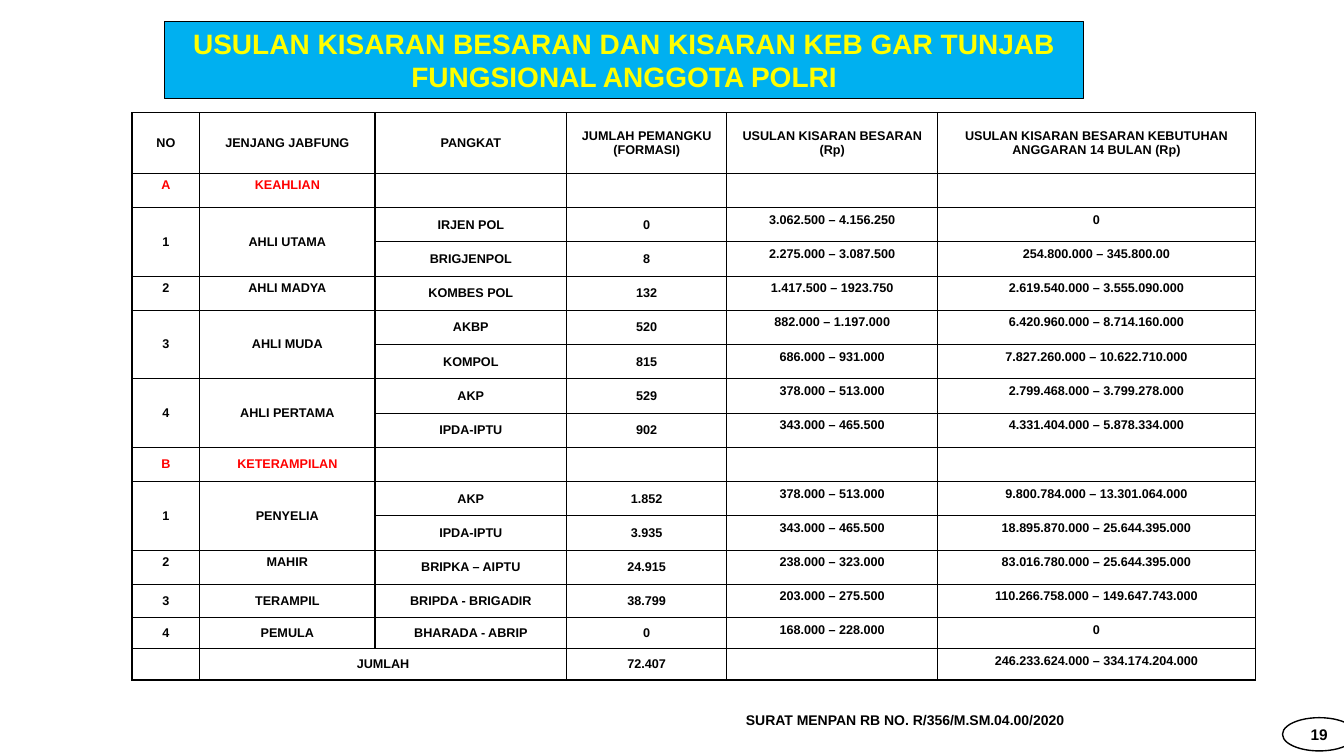
from lxml import etree
from pptx import Presentation
from pptx.dml.color import RGBColor
from pptx.enum.shapes import MSO_SHAPE
from pptx.enum.text import MSO_ANCHOR, PP_ALIGN
from pptx.oxml.ns import qn
from pptx.util import Inches, Pt

RECTANGLE, OVAL = MSO_SHAPE.RECTANGLE, MSO_SHAPE.OVAL
TOP, MIDDLE = MSO_ANCHOR.TOP, MSO_ANCHOR.MIDDLE
CENTER, JUSTIFY = PP_ALIGN.CENTER, PP_ALIGN.JUSTIFY
GRID_COLUMNS, GRID_ROWS, GRID_STEP = 133.3, 75, 0.1

HEADERS = [
    "NO", "JENJANG JABFUNG", "PANGKAT", "JUMLAH PEMANGKU (FORMASI)",
    "USULAN KISARAN BESARAN (Rp)",
    "USULAN KISARAN BESARAN KEBUTUHAN ANGGARAN 14 BULAN (Rp)",
]
POSITIONS = [
    ["A", "KEAHLIAN", "", "", "", ""],
    ["1", "AHLI UTAMA", "IRJEN POL", "0", "3.062.500 – 4.156.250", "0"],
    ["", "", "BRIGJENPOL", "8", "2.275.000 – 3.087.500", "254.800.000 – 345.800.00"],
    ["2", "AHLI MADYA", "KOMBES POL", "132", "1.417.500 – 1923.750", "2.619.540.000 – 3.555.090.000"],
    ["3", "AHLI MUDA", "AKBP", "520", "882.000 – 1.197.000", "6.420.960.000 – 8.714.160.000"],
    ["", "", "KOMPOL", "815", "686.000 – 931.000", "7.827.260.000 – 10.622.710.000"],
    ["4", "AHLI PERTAMA", "AKP", "529", "378.000 – 513.000", "2.799.468.000 – 3.799.278.000"],
    ["", "", "IPDA-IPTU", "902", "343.000 – 465.500", "4.331.404.000 – 5.878.334.000"],
    ["B", "KETERAMPILAN", "", "", "", ""],
    ["1", "PENYELIA", "AKP", "1.852", "378.000 – 513.000", "9.800.784.000 – 13.301.064.000"],
    ["", "", "IPDA-IPTU", "3.935", "343.000 – 465.500", "18.895.870.000 – 25.644.395.000"],
    ["2", "MAHIR", "BRIPKA – AIPTU", "24.915", "238.000 – 323.000", "83.016.780.000 – 25.644.395.000"],
    ["3", "TERAMPIL", "BRIPDA - BRIGADIR", "38.799", "203.000 – 275.500", "110.266.758.000 – 149.647.743.000"],
    ["4", "PEMULA", "BHARADA - ABRIP", "0", "168.000 – 228.000", "0"],
]
TOTAL = ["", "JUMLAH", "", "72.407", "", "246.233.624.000 – 334.174.204.000"]
COLUMN_WIDTHS = [6.7, 17.4, 19, 15.9, 20.9, 31.5]
ROW_HEIGHTS = [6] + [3.4] * 12 + [3.3, 3.1, 3.1]
TOP_LABELS = {"KEAHLIAN", "AHLI MADYA", "MAHIR"}
SECTIONS = {"A", "B"}


def color(value):
    return RGBColor.from_string(value)


def grid(*steps):
    return [Inches(step * GRID_STEP) for step in steps]


def add_solid(parent, value):
    fill = etree.SubElement(parent, qn("a:solidFill"))
    etree.SubElement(fill, qn("a:srgbClr"), val=value)


class Sheet:
    font, ink, paper = "Arial", "000000", "FFFFFF"

    def __init__(self, deck):
        self.slide = deck.slides.add_slide(deck.slide_layouts[6])

    def label(self, frame, text, size, ink=None, align=CENTER):
        frame.text = text
        paragraph = frame.paragraphs[0]
        paragraph.alignment = align
        for run in paragraph.runs:
            run.font.name, run.font.size, run.font.bold = self.font, Pt(size), True
            run.font.color.rgb = color(ink or self.ink)
        if not text:
            etree.SubElement(paragraph._p, qn("a:endParaRPr"), sz=str(size * 100))
        return paragraph

    def shape(self, kind, place, text, size, fill, line, ink=None, anchor=MIDDLE):
        shape = self.slide.shapes.add_shape(kind, *grid(*place))
        shape.shadow.inherit = False
        shape.fill.solid()
        shape.fill.fore_color.rgb = color(fill)
        shape.line.color.rgb = color(self.ink)
        shape.line.width = Pt(line)
        shape.text_frame.word_wrap = True
        shape.text_frame.vertical_anchor = anchor
        return self.label(shape.text_frame, text, size, ink)

    def shade_text(self, paragraph, ink):
        for run in paragraph.runs:
            properties = run._r.get_or_add_rPr()
            outline = etree.Element(qn("a:ln"), w=str(Pt(0.75)))
            add_solid(outline, ink)
            properties.insert(0, outline)
            effects = etree.Element(qn("a:effectLst"))
            shadow = etree.SubElement(
                effects, qn("a:outerShdw"),
                blurRad=str(Pt(3)), dist=str(Pt(3)), dir="2700000", algn="tl")
            etree.SubElement(shadow, qn("a:srgbClr"), val=self.ink)
            properties.insert(2, effects)

    def note(self, place, text, size):
        box = self.slide.shapes.add_textbox(*grid(*place))
        box.text_frame.word_wrap = True
        self.label(box.text_frame, text, size, align=JUSTIFY)

    def cell(self, cell, text, size, ink, anchor):
        cell.vertical_anchor = anchor
        cell.margin_left = cell.margin_right = Inches(0.13)
        cell.margin_top = cell.margin_bottom = Inches(0.05)
        self.label(cell.text_frame, text, size, ink)
        properties = cell._tc.get_or_add_tcPr()
        for side in ("L", "R", "T", "B"):
            border = etree.SubElement(properties, qn(f"a:ln{side}"), w=str(Pt(1)))
            add_solid(border, self.ink)
        cell.fill.solid()
        cell.fill.fore_color.rgb = color(self.paper)

    def table(self, left, top, rows, size):
        frame = self.slide.shapes.add_table(
            len(rows), len(COLUMN_WIDTHS),
            *grid(left, top, sum(COLUMN_WIDTHS), sum(ROW_HEIGHTS)))
        table = frame.table
        table.first_row = table.horz_banding = False
        for column, width in zip(table.columns, grid(*COLUMN_WIDTHS)):
            column.width = width
        for row, height in zip(table.rows, grid(*ROW_HEIGHTS)):
            row.height = height
        for r, values in enumerate(rows):
            ink = "FF0000" if values[0] in SECTIONS else self.ink
            for c, text in enumerate(values):
                high = r > 0 and (c > 3 or c < 2 and values[1] in TOP_LABELS)
                self.cell(table.cell(r, c), text, size, ink, TOP if high else MIDDLE)
            if not values[1]:
                for c in (0, 1):
                    table.cell(r - 1, c).merge(table.cell(r, c))
        last = len(rows) - 1
        table.cell(last, 1).merge(table.cell(last, 2))


def main():
    deck = Presentation()
    deck.slide_width, deck.slide_height = grid(GRID_COLUMNS, GRID_ROWS)
    sheet = Sheet(deck)
    sheet.table(13.1, 11.2, [HEADERS, *POSITIONS, TOTAL], 9)
    title = sheet.shape(
        RECTANGLE, (16.3, 2.1, 91.2, 7.7),
        "USULAN KISARAN BESARAN DAN KISARAN KEB GAR TUNJAB FUNGSIONAL ANGGOTA POLRI",
        20, "00B0F0", 0.75, "FFFF00", TOP)
    sheet.shade_text(title, "FFFF00")
    sheet.shape(OVAL, (127.2, 71.2, 7.3, 3.3), "19", 11, sheet.paper, 1)
    sheet.note((73, 70.1, 51.4, 2.7), "SURAT MENPAN RB NO. R/356/M.SM.04.00/2020", 10)
    deck.save("out.pptx")


if __name__ == "__main__":
    main()
